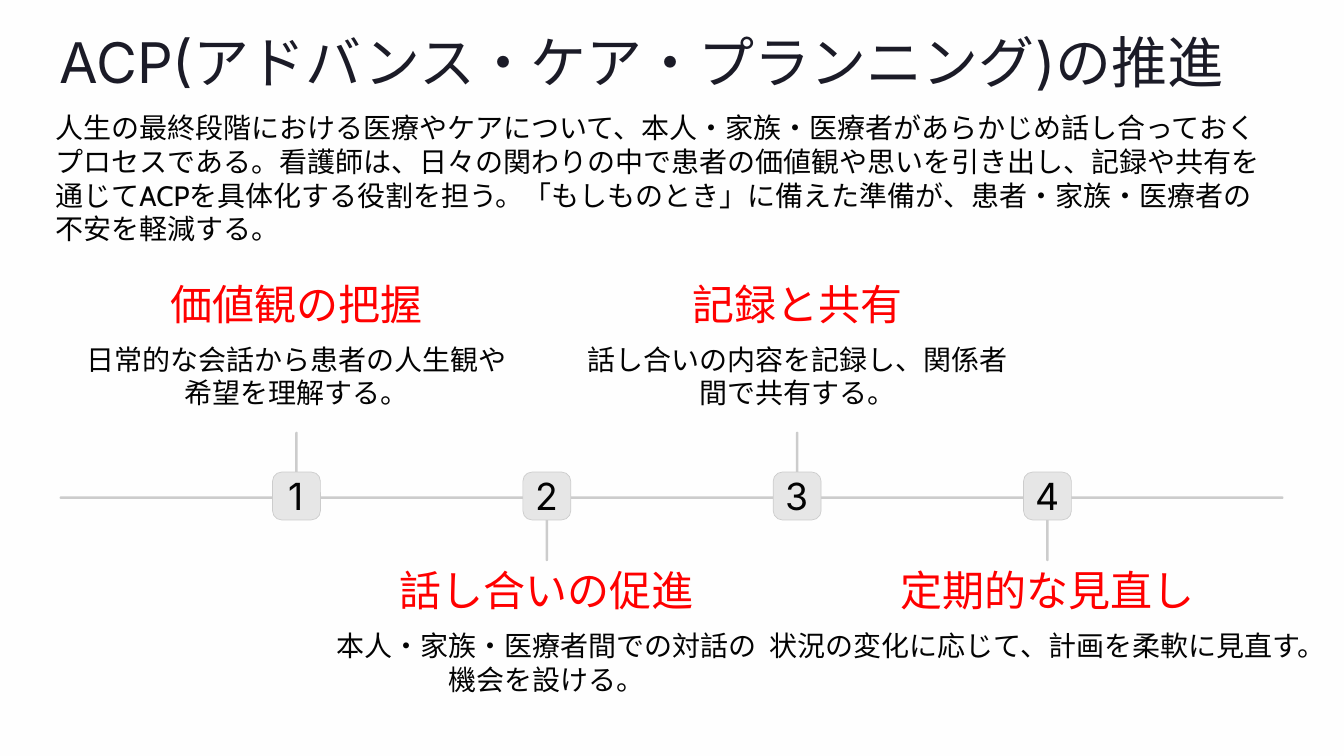
from dataclasses import dataclass

from pptx import Presentation
from pptx.dml.color import RGBColor
from pptx.enum.shapes import MSO_SHAPE
from pptx.enum.text import MSO_ANCHOR, MSO_AUTO_SIZE, PP_ALIGN
from pptx.oxml.xmlchemy import OxmlElement
from pptx.util import Inches, Pt


@dataclass(frozen=True)
class Theme:
    """Colours, fonts and type sizes of the slide."""
    background: str = "FEFEFE"
    title: str = "1B1B27"
    text: str = "030303"
    accent: str = "FF0000"
    line: str = "CCCCCC"
    badge: str = "E6E6E6"
    heading_font: str = "Inter"
    body_font: str = "Cabin"
    title_size: int = 48
    heading_size: int = 36
    number_size: int = 32
    body_size: int = 24


THEME = Theme()
TITLE = "ACP(アドバンス・ケア・プランニング)の推進"
INTRODUCTION = (
    "人生の最終段階における医療やケアについて、本人・家族・医療者があらかじめ話し合っておく"
    "プロセスである。看護師は、日々の関わりの中で患者の価値観や思いを引き出し、記録や共有を"
    "通じてACPを具体化する役割を担う。「もしものとき」に備えた準備が、患者・家族・医療者の"
    "不安を軽減する。"
)
STEPS = [
    ("価値観の把握", "日常的な会話から患者の人生観や希望を理解する。"),
    ("話し合いの促進", "本人・家族・医療者間での対話の機会を設ける。"),
    ("記録と共有", "話し合いの内容を記録し、関係者間で共有する。"),
    ("定期的な見直し", "状況の変化に応じて、計画を柔軟に見直す。"),
]
CONTENT_WIDTH = 14.57
FIRST_CENTER = 3.53
STEP_PITCH = 2.98
AXIS_TOP = 5.91
STEM_LENGTH = 0.77
BAR_THICKNESS = 0.03
BADGE_SIZE = 0.57


def place(shape, left, top, width, height):
    """Move and size a shape, in inches."""
    shape.left, shape.top = Inches(left), Inches(top)
    shape.width, shape.height = Inches(width), Inches(height)


def write_text(shape, text, *, size, color, font, align=PP_ALIGN.LEFT, spacing=None, wrap=True):
    """Write one formatted paragraph into a shape without margins."""
    frame = shape.text_frame
    frame.text = text
    frame.auto_size = MSO_AUTO_SIZE.NONE
    frame.word_wrap = wrap
    frame.vertical_anchor = MSO_ANCHOR.TOP
    frame.margin_left = frame.margin_right = frame.margin_top = frame.margin_bottom = 0
    paragraph = frame.paragraphs[0]
    paragraph.alignment = align
    paragraph.space_before = Pt(0)
    if spacing:
        paragraph.line_spacing = Pt(spacing)
    run_font = paragraph.runs[0].font
    run_font.name = font
    run_font.size = Pt(size)
    run_font.color.rgb = RGBColor.from_string(color)


def remove_bullet(paragraph):
    """Turn off the bullet and hanging indent of a paragraph."""
    properties = paragraph._p.get_or_add_pPr()
    properties.set("marL", "0")
    properties.set("indent", "0")
    properties.append(OxmlElement("a:buNone"))


def add_centered_text(slide, text, center, top, width, height, **text_format):
    """Add a text box centred on a horizontal position."""
    box = slide.shapes.add_textbox(
        Inches(center - width / 2), Inches(top), Inches(width), Inches(height))
    write_text(box, text, align=PP_ALIGN.CENTER, **text_format)


def add_rounded_box(slide, left, top, width, height, *, fill, rounding=0.5, outline=None):
    """Add a flat rounded rectangle with an optional thin outline."""
    shape = slide.shapes.add_shape(
        MSO_SHAPE.ROUNDED_RECTANGLE, Inches(left), Inches(top), Inches(width), Inches(height))
    shape.adjustments[0] = rounding
    shape.shadow.inherit = False
    shape.fill.solid()
    shape.fill.fore_color.rgb = RGBColor.from_string(fill)
    if outline:
        shape.line.color.rgb = RGBColor.from_string(outline)
        shape.line.width = Pt(0.6)
    else:
        shape.line.fill.background()


def add_step(slide, index, heading, description):
    """Add a numbered step, above the axis for even indexes and below for odd."""
    center = FIRST_CENTER + index * STEP_PITCH
    above = index % 2 == 0
    stem_top = AXIS_TOP - STEM_LENGTH if above else AXIS_TOP
    heading_top = 3.52 if above else 6.93
    add_rounded_box(slide, center - BAR_THICKNESS / 2, stem_top, BAR_THICKNESS, STEM_LENGTH,
                    fill=THEME.line)
    add_rounded_box(slide, center - BADGE_SIZE / 2, 5.62, BADGE_SIZE, BADGE_SIZE,
                    fill=THEME.badge, rounding=0.19, outline=THEME.line)
    add_centered_text(slide, str(index + 1), center, 5.79, 0.38, 0.48, size=THEME.number_size,
                      color=THEME.text, font=THEME.heading_font, spacing=27.5, wrap=False)
    add_centered_text(slide, heading, center, heading_top, 3.19, 0.4, size=THEME.heading_size,
                      color=THEME.accent, font=THEME.heading_font, spacing=28.5, wrap=False)
    is_last = index == len(STEPS) - 1
    add_centered_text(slide, description, center, heading_top + 0.55, 5.13,
                      0.41 if is_last else 0.82, size=THEME.body_size, color=THEME.text,
                      font=THEME.body_font, spacing=29, wrap=not is_last)


def main():
    """Build the slide and save it."""
    presentation = Presentation()
    presentation.slide_width, presentation.slide_height = Inches(16), Inches(9)
    slide = presentation.slides.add_slide(presentation.slide_layouts[1])
    slide.background.fill.solid()
    slide.background.fill.fore_color.rgb = RGBColor.from_string(THEME.background)

    title, introduction = slide.placeholders
    place(title, 0.71, 0.33, CONTENT_WIDTH, 0.8)
    write_text(title, TITLE, size=THEME.title_size, color=THEME.title,
               font=THEME.heading_font, spacing=57)
    place(introduction, 0.66, 1.32, CONTENT_WIDTH, 1.22)
    write_text(introduction, INTRODUCTION, size=THEME.body_size, color=THEME.text,
               font=THEME.body_font)
    remove_bullet(introduction.text_frame.paragraphs[0])

    add_rounded_box(slide, 0.71, AXIS_TOP, CONTENT_WIDTH, BAR_THICKNESS, fill=THEME.line)
    for index, (heading, description) in enumerate(STEPS):
        add_step(slide, index, heading, description)
    presentation.save("out.pptx")


if __name__ == "__main__":
    main()
